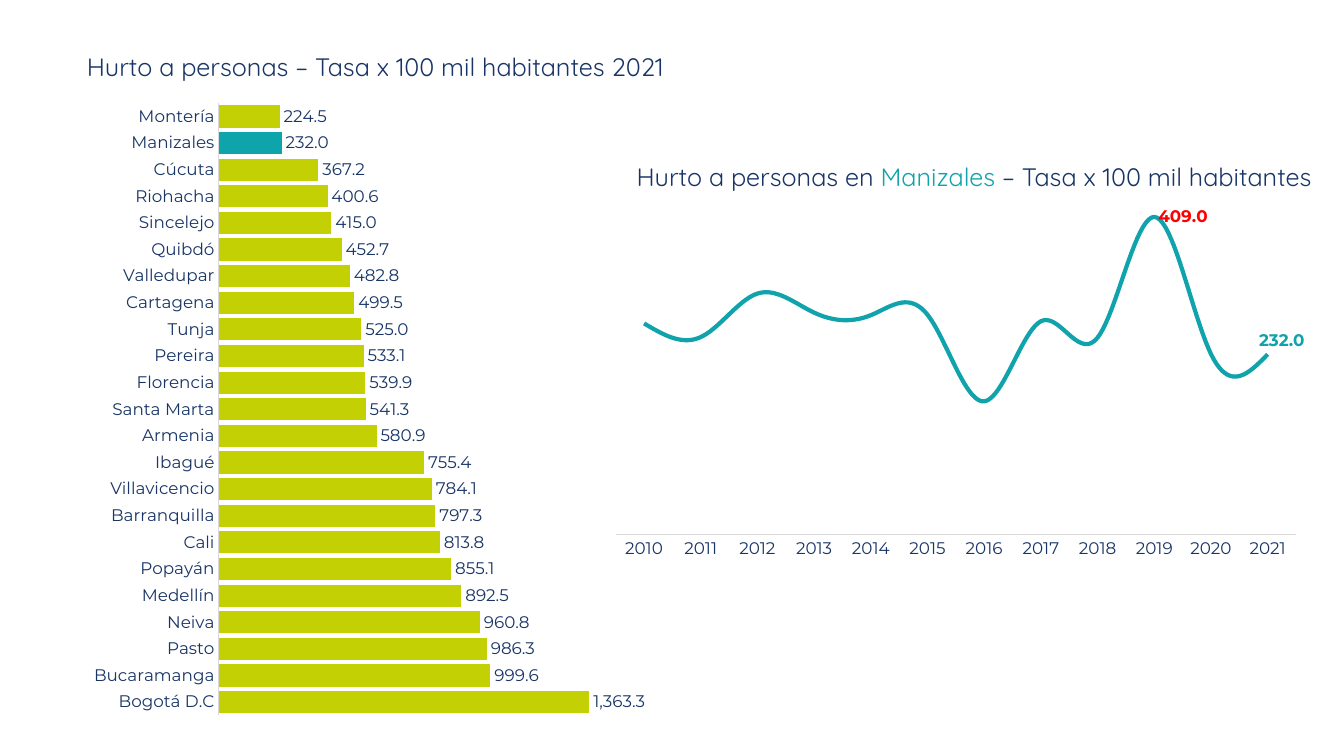
from dataclasses import dataclass

import pptx
import pptx.chart.data
import pptx.dml.color
import pptx.enum.chart
import pptx.enum.text
import pptx.oxml
import pptx.oxml.ns
import pptx.util
from pptx.util import Cm


@dataclass(frozen=True)
class Theme:
    navy: str = "193566"
    teal: str = "10A3AB"
    highlight: str = "0EA4AC"
    lime: str = "C3D004"
    red: str = "FF0000"
    axis: str = "D9D9D9"
    heading_font: str = "Quicksand"
    chart_font: str = "Montserrat"
    heading_size: int = 18
    chart_size: int = 12


THEME = Theme()

CITY_RATES = {
    "Bogotá D.C": 1363.3, "Bucaramanga": 999.6, "Pasto": 986.3,
    "Neiva": 960.8, "Medellín": 892.5, "Popayán": 855.1, "Cali": 813.8,
    "Barranquilla": 797.3, "Villavicencio": 784.1, "Ibagué": 755.4,
    "Armenia": 580.9, "Santa Marta": 541.3, "Florencia": 539.9,
    "Pereira": 533.1, "Tunja": 525.0, "Cartagena": 499.5,
    "Valledupar": 482.8, "Quibdó": 452.7, "Sincelejo": 415.0,
    "Riohacha": 400.6, "Cúcuta": 367.2, "Manizales": 232.0,
    "Montería": 224.5,
}
FIRST_YEAR = 2010
YEAR_RATES = [271.8, 254.2, 310.3, 285.7, 282.4, 283.0,
              171.4, 274.6, 253.5, 409.0, 232.4, 232.0]


def rgb(color):
    return pptx.dml.color.RGBColor.from_string(color)


def style_font(font, name, size, color, bold=False):
    font.name = name
    font.size = pptx.util.Pt(size)
    font.bold = bold
    font.color.rgb = rgb(color)


def place(shape, left, top, width, height):
    shape.left, shape.top = Cm(left), Cm(top)
    shape.width, shape.height = Cm(width), Cm(height)


def write_heading(box, parts):
    frame = box.text_frame
    frame.word_wrap = True
    frame.vertical_anchor = pptx.enum.text.MSO_ANCHOR.TOP
    frame.auto_size = pptx.enum.text.MSO_AUTO_SIZE.SHAPE_TO_FIT_TEXT
    para = frame.paragraphs[0]
    para.alignment = pptx.enum.text.PP_ALIGN.CENTER
    for text, color in parts:
        span = para.add_run()
        span.text = text
        style_font(span.font, THEME.heading_font, THEME.heading_size, color)


def manual_layout(fields):
    items = "".join(f'<c:{tag} val="{value}"/>' for tag, value in fields.items())
    return pptx.oxml.parse_xml(
        f'<c:layout {pptx.oxml.ns.nsdecls("c")}>'
        f"<c:manualLayout>{items}</c:manualLayout></c:layout>"
    )


def set_plot_area(chart, left, top, width, height):
    area = chart.element.find(".//" + pptx.oxml.ns.qn("c:plotArea"))
    for layout in area.findall(pptx.oxml.ns.qn("c:layout")):
        area.remove(layout)
    area.insert(0, manual_layout({
        "layoutTarget": "inner", "xMode": "edge", "yMode": "edge",
        "x": left, "y": top, "w": width, "h": height,
    }))


def add_rate_chart(page, kind, categories, values, bounds, maximum):
    data = pptx.chart.data.CategoryChartData(number_format="0.0")
    data.categories = categories
    data.add_series("Tasa", values)
    chart = page.shapes.add_chart(kind, *map(Cm, bounds), data).chart
    chart.has_legend = False
    chart.has_title = False
    style_font(chart.font, THEME.chart_font, THEME.chart_size, THEME.navy)
    category_axis = chart.category_axis
    category_axis.has_major_gridlines = False
    category_axis.major_tick_mark = pptx.enum.chart.XL_TICK_MARK.NONE
    category_axis.format.line.color.rgb = rgb(THEME.axis)
    category_axis.format.line.width = pptx.util.Pt(0.75)
    value_axis = chart.value_axis
    value_axis.has_major_gridlines = False
    value_axis.minimum_scale = 0
    value_axis.maximum_scale = maximum
    value_axis.visible = False
    return chart


def add_city_chart(page):
    cities = list(CITY_RATES)
    chart = add_rate_chart(
        page, pptx.enum.chart.XL_CHART_TYPE.BAR_CLUSTERED, cities,
        CITY_RATES.values(), (1.85, 2.21, 15.24, 16.21), 1600)
    set_plot_area(chart, 0.24, 0.024, 0.72, 0.952)
    plot = chart.plots[0]
    plot.gap_width = 20
    plot.vary_by_categories = False
    series = plot.series[0]
    series.format.fill.solid()
    series.format.fill.fore_color.rgb = rgb(THEME.lime)
    bar = series.points[cities.index("Manizales")].format.fill
    bar.solid()
    bar.fore_color.rgb = rgb(THEME.highlight)
    labels = series.data_labels
    labels.show_value = True
    labels.number_format = "#,##0.0"
    labels.number_format_is_linked = False
    labels.position = pptx.enum.chart.XL_LABEL_POSITION.OUTSIDE_END
    style_font(labels.font, THEME.chart_font, THEME.chart_size, THEME.navy)


def label_year(series, year, color, position, shift=0):
    label = series.points[year - FIRST_YEAR].data_label
    style_font(label.font, THEME.chart_font, THEME.chart_size, color, bold=True)
    label.position = position
    for item in series.data_labels._element.findall(pptx.oxml.ns.qn("c:dLbl")):
        index = item.find(pptx.oxml.ns.qn("c:idx"))
        if int(index.get("val")) == year - FIRST_YEAR:
            index.addnext(pptx.oxml.parse_xml(
                f'<c:numFmt {pptx.oxml.ns.nsdecls("c")} '
                'formatCode="0.0" sourceLinked="0"/>'))
            if shift:
                index.addnext(manual_layout({"x": shift, "y": 0}))


def add_year_chart(page):
    years = [str(FIRST_YEAR + step) for step in range(len(YEAR_RATES))]
    chart = add_rate_chart(
        page, pptx.enum.chart.XL_CHART_TYPE.LINE, years,
        YEAR_RATES, (15.16, 4.47, 17.86, 9.78), 450)
    set_plot_area(chart, 0.02, 0.02, 0.96, 0.9)
    plot = chart.plots[0]
    plot.vary_by_categories = False
    series = plot.series[0]
    series.smooth = True
    series.marker.style = pptx.enum.chart.XL_MARKER_STYLE.NONE
    series.format.line.color.rgb = rgb(THEME.teal)
    series.format.line.width = pptx.util.Pt(3)
    series.data_labels.show_value = False
    positions = pptx.enum.chart.XL_LABEL_POSITION
    label_year(series, 2019, THEME.red, positions.RIGHT)
    label_year(series, 2021, THEME.teal, positions.ABOVE, shift=0.02)


def main():
    deck = pptx.Presentation()
    deck.slide_width, deck.slide_height = Cm(33.87), Cm(19.05)
    page = deck.slides.add_slide(deck.slide_layouts[5])
    title = page.shapes.title
    place(title, 0, 1.17, 18.92, 1.02)
    write_heading(title, [
        ("Hurto a personas – Tasa x 100 mil habitantes 2021", THEME.navy)])
    add_city_chart(page)
    add_year_chart(page)
    subtitle = page.shapes.add_textbox(*map(Cm, (14.25, 3.94, 20.6, 1.02)))
    write_heading(subtitle, [
        ("Hurto a personas en ", THEME.navy),
        ("Manizales ", THEME.teal),
        ("– Tasa x 100 mil habitantes", THEME.navy)])
    deck.save("out.pptx")


if __name__ == "__main__":
    main()
